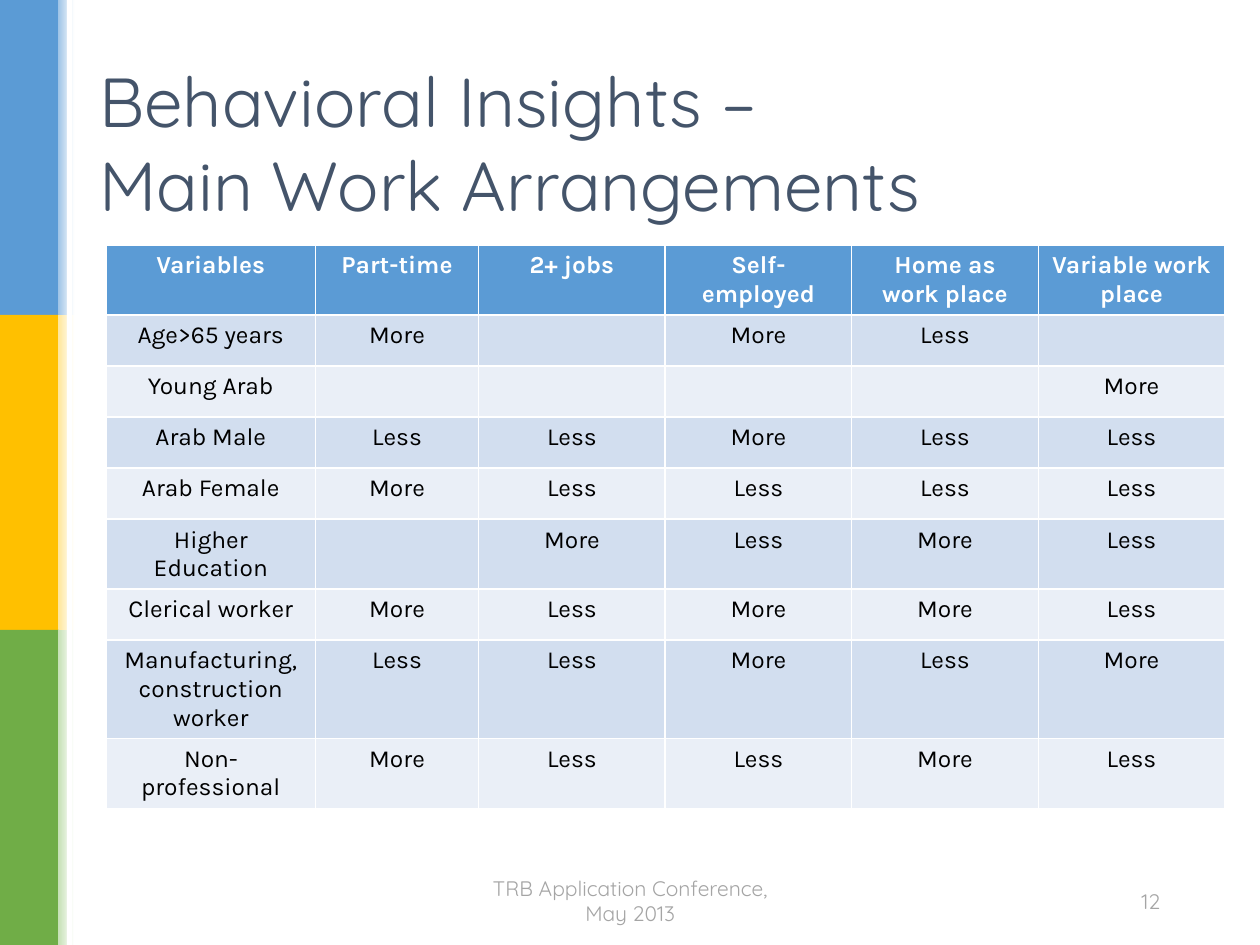
"""Build the slide on behavioral insights into main work arrangements."""
from pptx import Presentation
from pptx.dml.color import RGBColor
from pptx.enum.shapes import MSO_SHAPE
from pptx.enum.text import MSO_ANCHOR, PP_ALIGN
from pptx.util import Cm, Pt


def write(tf, text, size=14, font="Karla", color="000000", bold=False, align=PP_ALIGN.CENTER):
    p = tf.paragraphs[0]
    p.alignment = align
    p.text = text
    p.font.size = Pt(size)
    p.font.name = font
    p.font.bold = bold
    for r in p.runs:
        r.font.size, r.font.name, r.font.bold = Pt(size), font, bold
        r.font.color.rgb = RGBColor.from_string(color)


def add_bar(s, left, top, width, height, color, fade_to=None):
    sp = s.shapes.add_shape(MSO_SHAPE.RECTANGLE, Cm(left), Cm(top), Cm(width), Cm(height))
    sp.shadow.inherit = False
    sp.line.fill.background()
    if fade_to:
        sp.fill.gradient()
        sp.fill.gradient_angle = 0
        for stop, value in zip(sp.fill.gradient_stops, (color, fade_to)):
            stop.color.rgb = RGBColor.from_string(value)
    else:
        sp.fill.solid()
        sp.fill.fore_color.rgb = RGBColor.from_string(color)


prs = Presentation()
prs.slide_width, prs.slide_height = Cm(25.4), Cm(19.05)
s = prs.slides.add_slide(prs.slide_layouts[6])

bars = [("5B9BD5", "9DC3E6"), ("FFC000", "FFE699"), ("70AD47", "C5E0B4")]
for i, (color, tint) in enumerate(bars):
    add_bar(s, 0, i * 6.35, 1.19, 6.35, color)
    add_bar(s, 1.17, i * 6.35, 0.33, 6.35, tint, fade_to="FFFFFF")
add_bar(s, 1.35, 0, 0.1, 19.05, "FFFFFF")

rows = [
    ["Variables", "Part-time", "2+ jobs", "Self-employed", "Home as work place", "Variable work place"],
    ["Age>65 years", "More", "", "More", "Less", ""],
    ["Young Arab", "", "", "", "", "More"],
    ["Arab Male", "Less", "Less", "More", "Less", "Less"],
    ["Arab Female", "More", "Less", "Less", "Less", "Less"],
    ["Higher Education", "", "More", "Less", "More", "Less"],
    ["Clerical worker", "More", "Less", "More", "More", "Less"],
    ["Manufacturing, construction worker", "Less", "Less", "More", "Less", "More"],
    ["Non-professional", "More", "Less", "Less", "More", "Less"],
]
widths = [4.22, 3.29] + [3.76] * 4
table = s.shapes.add_table(len(rows), len(widths), Cm(2.14), Cm(4.94),
                           Cm(sum(widths)), Cm(1.03 * len(rows))).table
for column, width in zip(table.columns, widths):
    column.width = Cm(width)
for i, values in enumerate(rows):
    table.rows[i].height = Cm(1.03)
    header = i == 0
    fill = "5B9BD5" if header else "D2DEEF" if i % 2 else "EAEFF7"
    for cell, value in zip(table.rows[i].cells, values):
        cell.fill.solid()
        cell.fill.fore_color.rgb = RGBColor.from_string(fill)
        write(cell.text_frame, value, color="FFFFFF" if header else "000000", bold=header)

texts = [
    ("Behavioral Insights – \vMain Work Arrangements", (1.75, 1.02, 21.9, 3.68), 39.6, "44546A", PP_ALIGN.LEFT),
    ("TRB Application Conference, May 2013", (9.68, 17.65, 6.05, 1.02), 12, "A5A5A5", PP_ALIGN.CENTER),
    ("12", (16.81, 17.65, 6.83, 1.02), 12, "A5A5A5", PP_ALIGN.RIGHT),
]
for text, box, size, color, align in texts:
    tf = s.shapes.add_textbox(*map(Cm, box)).text_frame
    tf.word_wrap = True
    tf.vertical_anchor = MSO_ANCHOR.MIDDLE
    write(tf, text, size=size, font="Quicksand", color=color, align=align)

prs.save("out.pptx")
